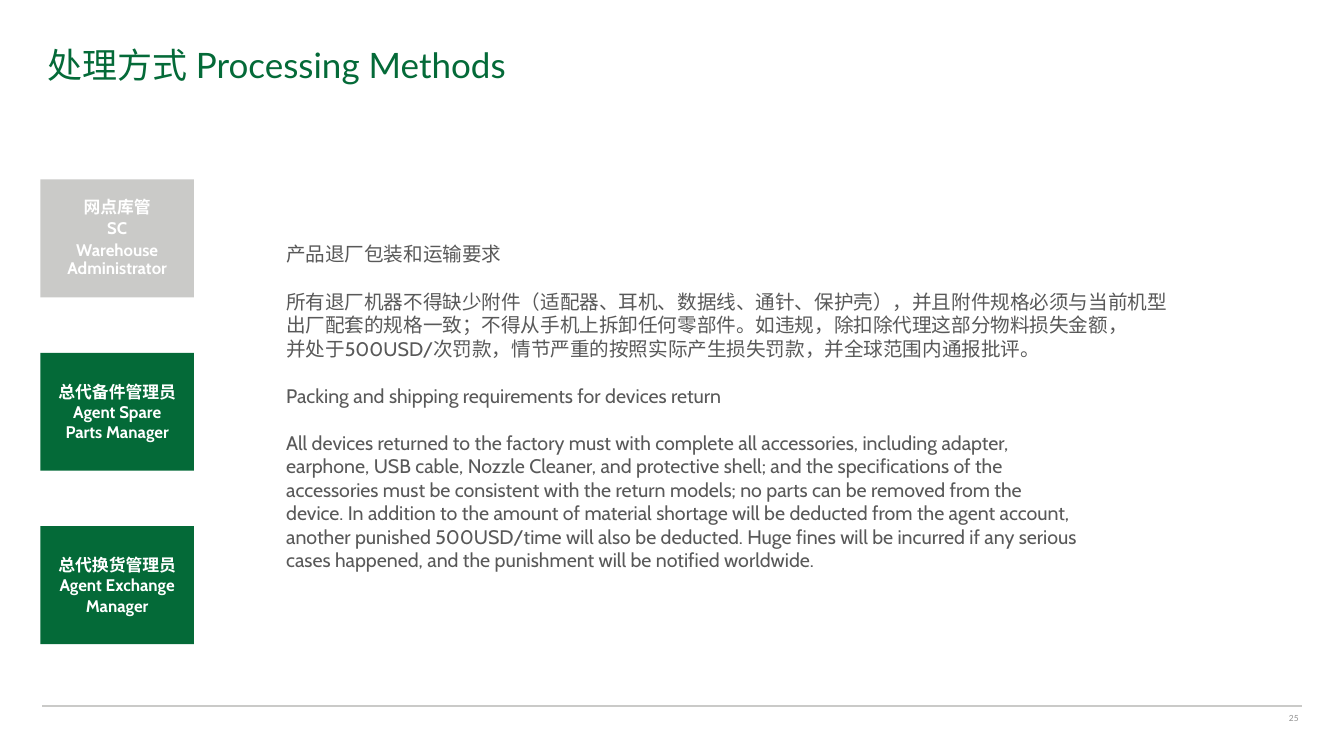
from lxml import etree
from pptx import Presentation
from pptx.dml.color import RGBColor
from pptx.enum.shapes import MSO_CONNECTOR as Connector, MSO_SHAPE as Shape
from pptx.enum.text import MSO_ANCHOR as Anchor, MSO_AUTO_SIZE as AutoSize, PP_ALIGN as Align
from pptx.oxml.ns import qn
from pptx.util import Inches, Pt

GREEN, GREY, WHITE = "046A38", "CACAC8", "FFFFFF"
TITLE_ONLY = 5

TITLE_FONT = {"name": "Lato", "size": Pt(50), "bold": False}
NUMBER_FONT = {"name": "Lato", "size": Pt(12)}
BODY_FONT = {"name": "Cabin", "size": Pt(28)}
ROLE_FONT = {"name": "Cabin", "size": Pt(24), "bold": True}

ROLES = [
    (GREY, ["网点库管", "SC", "Warehouse Administrator"],
     {"line_spacing": 0.9, "space_before": Pt(5)}),
    (GREEN, ["总代备件管理员", "Agent Spare", "Parts Manager"], {}),
    (GREEN, ["总代换货管理员", "Agent Exchange", "Manager"], {}),
]

REQUIREMENTS = [
    ["产品退厂包装和运输要求"],
    ["所有退厂机器不得缺少附件（适配器、耳机、数据线、通针、保护壳），并且附件规格必须与当前机型",
     "出厂配套的规格一致；不得从手机上拆卸任何零部件。如违规，除扣除代理这部分物料损失金额，",
     "并处于500USD/次罚款，情节严重的按照实际产生损失罚款，并全球范围内通报批评。"],
    ["Packing and shipping requirements for devices return"],
    ["All devices returned to the factory must with complete all accessories, including adapter,",
     "earphone, USB cable, Nozzle Cleaner, and protective shell; and the specifications of the",
     "accessories must be consistent with the return models; no parts can be removed from the",
     "device. In addition to the amount of material shortage will be deducted from the agent account,",
     "another punished 500USD/time will also be deducted. Huge fines will be incurred if any serious",
     "cases happened, and the punishment will be notified worldwide."],
]


def color(value):
    return RGBColor.from_string(value)


def set_all(target, values):
    for name, value in values.items():
        setattr(target, name, value)


def set_frame(frame, anchor, side=0.1, end=0.05):
    set_all(frame, {
        "word_wrap": True, "auto_size": AutoSize.NONE, "vertical_anchor": anchor,
        "margin_left": Inches(side), "margin_right": Inches(side),
        "margin_top": Inches(end), "margin_bottom": Inches(end),
    })


def write_lines(frame, lines, font, font_color, layout):
    """Write one paragraph per line; the first gets no space before."""
    frame.text = "\n".join(lines)
    for index, para in enumerate(frame.paragraphs):
        set_all(para, layout)
        if index == 0:
            para.space_before = Pt(0)
        for span in para.runs:
            set_all(span.font, font)
            span.font.color.rgb = color(font_color)


def add_title(page, text):
    title = page.shapes.title
    set_all(title, {"left": Inches(0.85), "top": Inches(0.69),
                    "width": Inches(24.98), "height": Inches(1.17)})
    set_frame(title.text_frame, Anchor.MIDDLE)
    write_lines(title.text_frame, [text], TITLE_FONT, GREEN, {"alignment": Align.LEFT})


def add_footer(page, number):
    rule = page.shapes.add_connector(
        Connector.STRAIGHT, Inches(0.84), Inches(14.01), Inches(25.83), Inches(14.01))
    rule.line.color.rgb = color(GREY)
    rule.line.width = Pt(2)
    etree.SubElement(rule._element.spPr, qn("a:effectLst"))
    box = page.shapes.add_textbox(Inches(22.84), Inches(14.08), Inches(2.99), Inches(0.31))
    set_frame(box.text_frame, Anchor.TOP, 0.06, 0.06)
    write_lines(box.text_frame, [number], NUMBER_FONT, "929292", {"alignment": Align.RIGHT})


def add_role(page, top, fill, lines, layout):
    box = page.shapes.add_shape(
        Shape.RECTANGLE, Inches(0.8), Inches(top), Inches(3.05), Inches(2.34))
    box.shadow.inherit = False
    box.fill.solid()
    box.fill.fore_color.rgb = color(fill)
    box.line.fill.background()
    set_frame(box.text_frame, Anchor.MIDDLE, 0.04, 0)
    write_lines(box.text_frame, lines, ROLE_FONT, WHITE, {"alignment": Align.CENTER, **layout})


def add_requirements(page, blocks):
    box = page.shapes.add_textbox(Inches(5.58), Inches(4.76), Inches(20.25), Inches(6.64))
    frame = box.text_frame
    set_frame(frame, Anchor.TOP)
    lines = [line for block in blocks for line in block]
    write_lines(frame, lines, BODY_FONT, "595959", {"alignment": Align.LEFT})
    start = 0
    for block in blocks[:-1]:
        start += len(block)
        frame.paragraphs[start].space_before = Pt(33.6)


def main():
    deck = Presentation()
    deck.slide_width, deck.slide_height = Inches(26.67), Inches(15)
    page = deck.slides.add_slide(deck.slide_layouts[TITLE_ONLY])
    add_footer(page, "25")
    add_title(page, "处理方式 Processing Methods")
    add_requirements(page, REQUIREMENTS)
    for index, (fill, lines, layout) in enumerate(ROLES):
        add_role(page, 3.56 + 3.44 * index, fill, lines, layout)
    deck.save("out.pptx")


if __name__ == "__main__":
    main()
